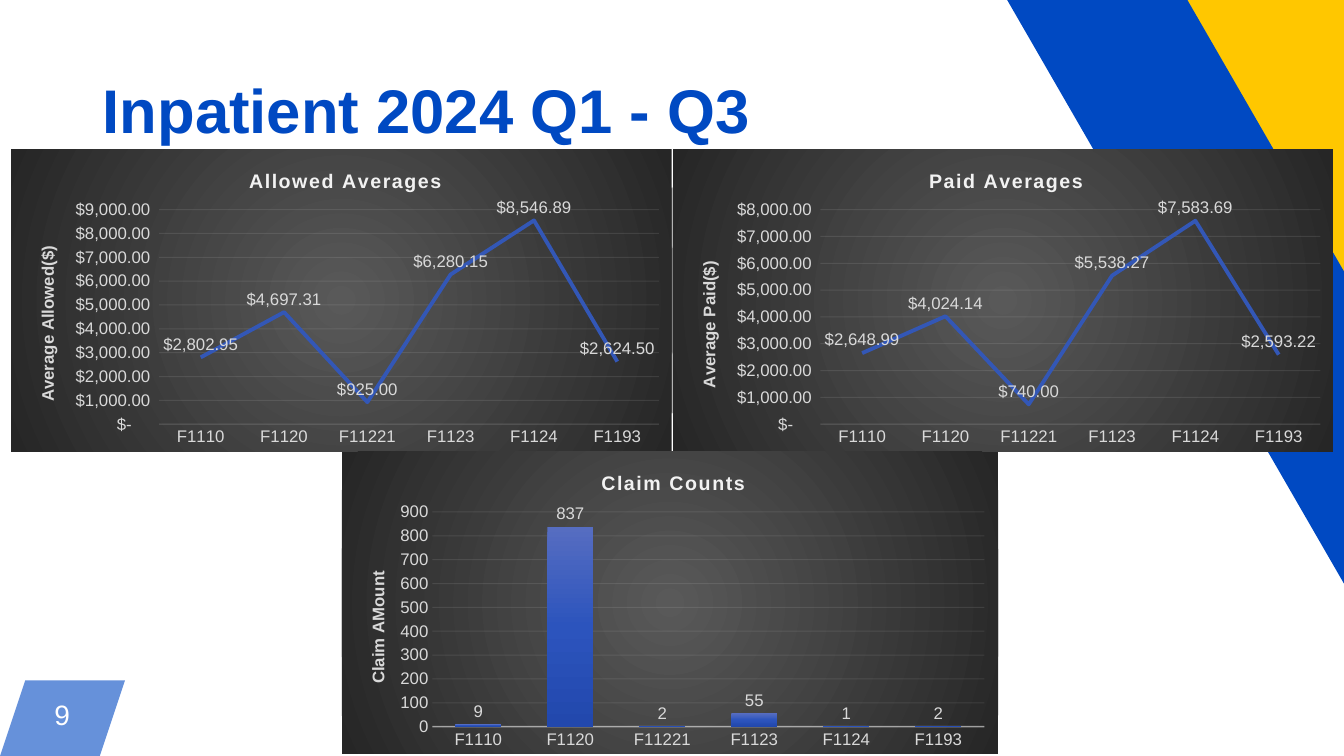
import pptx
import pptx.chart.data
import pptx.dml.color
import pptx.enum.chart
import pptx.enum.text
import pptx.oxml
import pptx.oxml.ns
import pptx.util

COLORS = {
    "blue": "0049C2", "yellow": "FFC700", "white": "FFFFFF",
    "line": "3357B6", "soft": "F2F2F2", "label": "D9D9D9",
}
BACKDROP = [(0, "595959"), (100, "262626")]
BAR_SHADES = [(0, "566DC1"), (50, "2C54BD"), (100, "2248AD")]
CIRCLE = '<a:path path="circle"><a:fillToRect l="50000" t="50000" r="50000" b="50000"/></a:path>'
DOWNWARD = '<a:lin ang="5400000" scaled="0"/>'
DOLLARS = '_("$"* #,##0.00_);_("$"* \\(#,##0.00\\);_("$"* "-"??_);_(@_)'
CODES = ["F1110", "F1120", "F11221", "F1123", "F1124", "F1193"]
CHART_TYPE = pptx.enum.chart.XL_CHART_TYPE
LABEL_POSITION = pptx.enum.chart.XL_LABEL_POSITION
qn = pptx.oxml.ns.qn


def rgb(name):
    return pptx.dml.color.RGBColor.from_string(COLORS[name])


def set_font(font, size=12, color="label", bold=False):
    font.name = "Arial"
    font.size = pptx.util.Pt(size)
    font.bold = bold
    font.color.rgb = rgb(color)


def write(frame, text, align=None, line_spacing=None, letter_spacing=None, **font):
    paragraph = frame.paragraphs[0]
    paragraph.alignment = align
    if line_spacing:
        paragraph.line_spacing = line_spacing
    run = paragraph.add_run()
    run.text = text
    set_font(run.font, **font)
    if letter_spacing:
        run.font._element.set("spc", str(letter_spacing * 100))


def set_opacity(fill, percent):
    color = fill._xPr.find(".//" + qn("a:srgbClr"))
    color.append(pptx.oxml.parse_xml(
        f'<a:alpha {pptx.oxml.ns.nsdecls("a")} val="{percent * 1000}"/>'))


def gradient_properties(stops, direction):
    marks = "".join(f'<a:gs pos="{position * 1000}"><a:srgbClr val="{color}"/></a:gs>'
                    for position, color in stops)
    return pptx.oxml.parse_xml(
        f'<c:spPr {pptx.oxml.ns.nsdecls("c", "a")}><a:gradFill><a:gsLst>{marks}</a:gsLst>'
        f'{direction}</a:gradFill><a:ln><a:noFill/></a:ln></c:spPr>')


def place(element, x, y, width=None, height=None):
    """Fix a chart part at shares of the chart's size."""
    for old in element.findall(qn("c:layout")):
        element.remove(old)
    target = '<c:layoutTarget val="inner"/>' if width else ""
    size = f'<c:w val="{width}"/><c:h val="{height}"/>' if width else ""
    layout = pptx.oxml.parse_xml(
        f'<c:layout {pptx.oxml.ns.nsdecls("c")}><c:manualLayout>{target}'
        f'<c:xMode val="edge"/><c:yMode val="edge"/><c:x val="{x}"/><c:y val="{y}"/>'
        f'{size}</c:manualLayout></c:layout>')
    text = element.find(qn("c:tx"))
    if text is None:
        element.insert(0, layout)
    else:
        text.addnext(layout)


class ClaimSlide:
    """Places elements by percent of the slide's width and height."""

    def __init__(self, presentation):
        self.width = presentation.slide_width
        self.height = presentation.slide_height
        self.slide = presentation.slides.add_slide(presentation.slide_layouts[5])

    def box(self, left, top, width, height):
        return (round(left * self.width / 100), round(top * self.height / 100),
                round(width * self.width / 100), round(height * self.height / 100))

    def title(self, text, *area):
        shape = self.slide.shapes.title
        shape.left, shape.top, shape.width, shape.height = self.box(*area)
        shape.text_frame.vertical_anchor = pptx.enum.text.MSO_ANCHOR.MIDDLE
        write(shape.text_frame, text, align=pptx.enum.text.PP_ALIGN.LEFT,
              line_spacing=0.9, size=44, color="blue", bold=True)

    def polygon(self, points, color, opacity=None):
        corners = [(x * self.width / 100, y * self.height / 100) for x, y in points]
        builder = self.slide.shapes.build_freeform(*corners[0])
        builder.add_line_segments(corners[1:])
        shape = builder.convert_to_shape()
        shape.shadow.inherit = False
        shape.fill.solid()
        shape.fill.fore_color.rgb = rgb(color)
        shape.line.fill.background()
        if opacity:
            set_opacity(shape.fill, opacity)

    def number(self, text, *area):
        frame = self.slide.shapes.add_textbox(*self.box(*area)).text_frame
        frame.word_wrap = True
        frame.vertical_anchor = pptx.enum.text.MSO_ANCHOR.MIDDLE
        frame.margin_left = frame.margin_right = pptx.util.Inches(0.04)
        frame.margin_top = frame.margin_bottom = pptx.util.Inches(0.04)
        write(frame, text, align=pptx.enum.text.PP_ALIGN.CENTER,
              line_spacing=pptx.util.Pt(17.7), size=20, color="white")

    def chart(self, kind, area, heading, heading_x, axis_name, axis_y, values,
              top, step, plot_x, plot_width, number_format="General"):
        data = pptx.chart.data.CategoryChartData(number_format=number_format)
        data.categories = CODES
        data.add_series("Series 1", values)
        chart = self.slide.shapes.add_chart(kind, *self.box(*area), data).chart
        set_font(chart.font)
        chart.has_legend = False
        chart._chartSpace.find(qn("c:chart")).addnext(gradient_properties(BACKDROP, CIRCLE))

        # Headings
        chart.has_title = True
        write(chart.chart_title.text_frame, heading, size=14, color="soft",
              bold=True, letter_spacing=1)
        place(chart.chart_title._element, heading_x, 0.05)
        axis = chart.value_axis
        axis.has_title = True
        frame = axis.axis_title.text_frame
        write(frame, axis_name, bold=True)
        frame._txBody.find(qn("a:bodyPr")).set("rot", "-5400000")
        place(axis.axis_title._element, 0.035, axis_y)
        place(chart._chartSpace.find(".//" + qn("c:plotArea")), plot_x, 0.2, plot_width, 0.71)

        # Axes
        is_line = kind == CHART_TYPE.LINE
        axis.minimum_scale, axis.maximum_scale, axis.major_unit = 0, top, step
        axis.tick_labels.number_format = number_format
        axis.tick_labels.number_format_is_linked = False
        axis.format.line.fill.background()
        rules = ((axis.major_gridlines, 0.75, 10),
                 (chart.category_axis, 0.75 if is_line else 1, 10 if is_line else 54))
        for part, weight, opacity in rules:
            line = part.format.line
            line.width = pptx.util.Pt(weight)
            line.color.rgb = rgb("soft")
            set_opacity(line.fill, opacity)
        for each in (axis, chart.category_axis):
            each.major_tick_mark = pptx.enum.chart.XL_TICK_MARK.NONE
            set_font(each.tick_labels.font)

        # Series and labels
        plot = chart.plots[0]
        plot.vary_by_categories = False
        series = plot.series[0]
        if is_line:
            series.smooth = False
            series.marker.style = pptx.enum.chart.XL_MARKER_STYLE.NONE
            series.format.line.width = pptx.util.Pt(2.75)
            series.format.line.color.rgb = rgb("line")
        else:
            plot.gap_width, plot.overlap = 100, -24
            series._element.find(qn("c:tx")).addnext(gradient_properties(BAR_SHADES, DOWNWARD))
        labels = series.data_labels
        labels.show_value = True
        labels.number_format = number_format
        labels.number_format_is_linked = False
        labels.position = LABEL_POSITION.ABOVE if is_line else LABEL_POSITION.OUTSIDE_END
        set_font(labels.font)


def main():
    presentation = pptx.Presentation()
    presentation.slide_width = pptx.util.Inches(13.33)
    presentation.slide_height = pptx.util.Inches(7.5)
    page = ClaimSlide(presentation)

    # Corner bands and page number
    page.polygon([(1.88, 90), (9.3, 90), (7.43, 100), (0, 100)], "blue", opacity=60)
    page.number("9", 1.88, 90, 5.48, 10)
    page.polygon([(87.92, 0), (100, 0), (100, 37.4)], "yellow")
    page.polygon([(74.94, 0), (88.35, 0), (100, 35.9), (100, 77.2)], "blue")

    page.title("Inpatient 2024 Q1 - Q3", 6.9, 5.33, 86.27, 19.33)

    # Average charts
    averages = [
        (0.83, "Allowed Averages", 0.355, "Average Allowed($)", 0.31, 9000,
         [2802.95, 4697.31, 925, 6280.15, 8546.89, 2624.5]),
        (50.04, "Paid Averages", 0.383, "Average Paid($)", 0.36, 8000,
         [2648.99, 4024.14, 740, 5538.27, 7583.69, 2593.22]),
    ]
    for left, heading, heading_x, axis_name, axis_y, top, values in averages:
        page.chart(CHART_TYPE.LINE, (left, 19.73, 49.14, 40), heading, heading_x,
                   axis_name, axis_y, values, top, 1000, 0.224, 0.757, DOLLARS)

    # Claim counts
    page.chart(CHART_TYPE.COLUMN_CLUSTERED, (25.43, 59.73, 48.84, 40), "Claim Counts", 0.39,
               "Claim AMount", 0.385, [9, 837, 2, 55, 1, 2], 900, 100, 0.138, 0.841)

    presentation.save("out.pptx")


if __name__ == "__main__":
    main()
